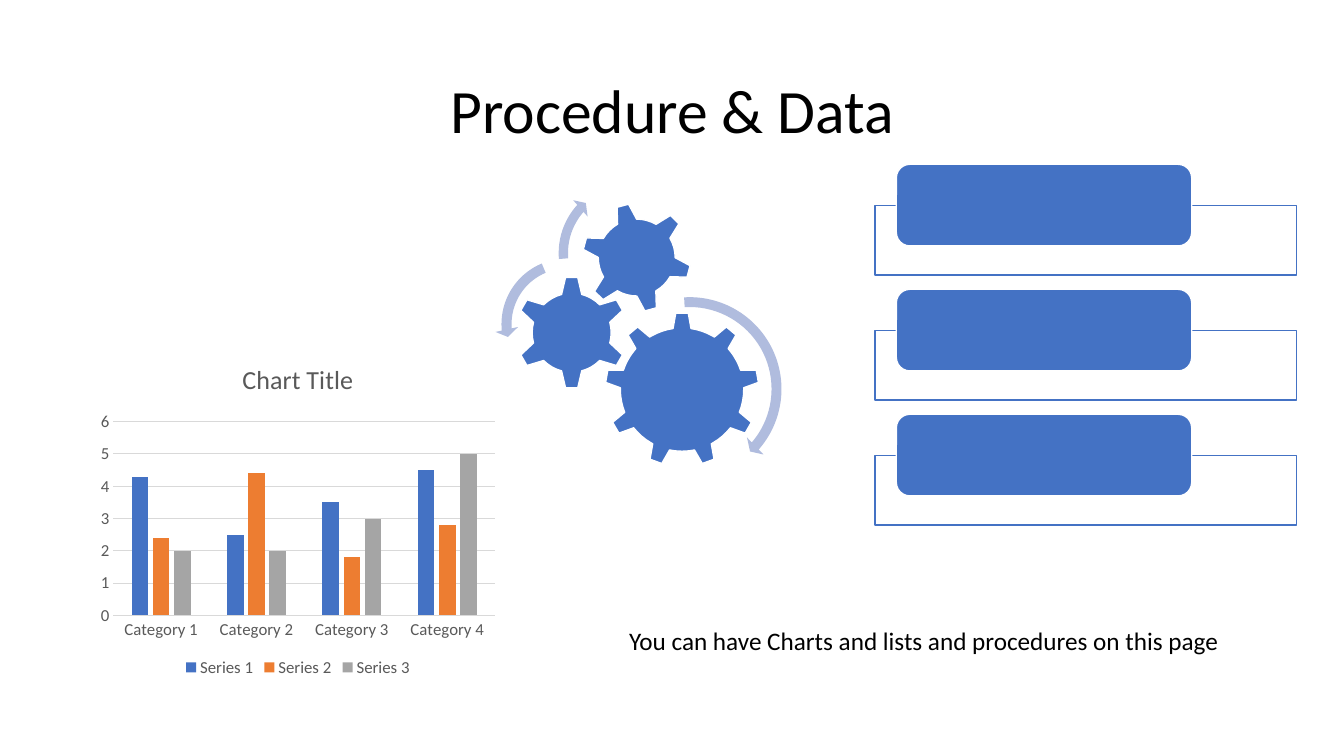
from lxml import etree
from pptx import Presentation
from pptx.chart.data import CategoryChartData
from pptx.dml.color import RGBColor
from pptx.enum.chart import XL_CHART_TYPE, XL_LEGEND_POSITION, XL_TICK_MARK
from pptx.enum.shapes import MSO_SHAPE
from pptx.enum.text import MSO_ANCHOR, MSO_AUTO_SIZE, PP_ALIGN
from pptx.oxml.ns import qn
from pptx.util import Inches, Pt

COLUMNS = XL_CHART_TYPE.COLUMN_CLUSTERED
LEGEND_BOTTOM = XL_LEGEND_POSITION.BOTTOM
NO_TICK = XL_TICK_MARK.NONE
RECTANGLE = MSO_SHAPE.RECTANGLE
ROUNDED = MSO_SHAPE.ROUNDED_RECTANGLE
GEAR_6 = MSO_SHAPE.GEAR_6
GEAR_9 = MSO_SHAPE.GEAR_9
RIGHT_ARC = MSO_SHAPE.CIRCULAR_ARROW
LEFT_ARC = MSO_SHAPE.LEFT_CIRCULAR_ARROW
MIDDLE = MSO_ANCHOR.MIDDLE
FIT_SHAPE = MSO_AUTO_SIZE.SHAPE_TO_FIT_TEXT
FIT_NONE = MSO_AUTO_SIZE.NONE
CENTER = PP_ALIGN.CENTER

BLACK = RGBColor(0x00, 0x00, 0x00)
WHITE = RGBColor(0xFF, 0xFF, 0xFF)
BLUE = RGBColor(0x44, 0x72, 0xC4)
ORANGE = RGBColor(0xED, 0x7D, 0x31)
GRAY = RGBColor(0xA5, 0xA5, 0xA5)
PALE_BLUE = RGBColor(0xB0, 0xBC, 0xDE)
GRID_GRAY = RGBColor(0xD9, 0xD9, 0xD9)
TEXT_GRAY = RGBColor(0x59, 0x59, 0x59)

FONT = "Calibri"
CATEGORIES = ["Category 1", "Category 2", "Category 3", "Category 4"]
SERIES = [
    ("Series 1", (4.3, 2.5, 3.5, 4.5), BLUE),
    ("Series 2", (2.4, 4.4, 1.8, 2.8), ORANGE),
    ("Series 3", (2, 2, 3, 5), GRAY),
]
GEARS = [
    (GEAR_9, 6, 3.1, 1.53, 0),
    (GEAR_6, 5.11, 2.74, 1.12, 0),
    (GEAR_6, 5.77, 2.01, 1.09, 345),
]
ARROWS = [
    (RIGHT_ARC, 5.86, 2.88, 1.96, (0.05, 2.99, 24.57, 159.95, 0.06)),
    (LEFT_ARC, 4.91, 2.5, 1.43, (0.07, 4.3, 104.89, 148.38, 0.08)),
    (RIGHT_ARC, 5.48, 1.74, 1.54, (0.06, 3.94, 133.14, 105.08, 0.07)),
]
LIST_ROWS = 3
ROW_TOP = 1.63
ROW_PITCH = 1.24


def set_values(target, values):
    for name, value in values.items():
        setattr(target, name, value)


def style_font(font, size, color):
    set_values(font, {"name": FONT, "size": Pt(size), "bold": False})
    font.color.rgb = color


def style_line(line, color, width):
    line.color.rgb = color
    line.width = Pt(width)


def write_text(box, text, size, frame_values, para_values):
    frame = box.text_frame
    set_values(frame, frame_values)
    para = frame.paragraphs[0]
    set_values(para, para_values)
    span = para.add_run()
    span.text = text
    style_font(span.font, size, BLACK)


def add_title(page, text):
    title = page.shapes.title
    set_values(title, {"left": Inches(0.92), "top": Inches(0.4),
                       "width": Inches(11.5), "height": Inches(1.45)})
    write_text(title, text, 44,
               {"vertical_anchor": MIDDLE, "word_wrap": True, "auto_size": FIT_NONE},
               {"alignment": CENTER, "line_spacing": 0.9})


def add_caption(page, text):
    box = page.shapes.add_textbox(Inches(6.14), Inches(6.15), Inches(6.12), Inches(0.4))
    write_text(box, text, 18, {"word_wrap": False, "auto_size": FIT_SHAPE}, {})


def add_figure(group, kind, left, top, width, height, fill, line):
    figure = group.shapes.add_shape(
        kind, Inches(left), Inches(top), Inches(width), Inches(height))
    figure.shadow.inherit = False
    figure.fill.solid()
    figure.fill.fore_color.rgb = fill
    if line is None:
        figure.line.fill.background()
    else:
        style_line(figure.line, line, 1)
    return figure


def set_opacity(figure, percent):
    color = figure.fill._xPr.find(qn("a:solidFill"))[0]
    etree.SubElement(color, qn("a:alpha")).set("val", str(percent * 1000))


def add_list(page):
    group = page.shapes.add_group_shape()
    for row in range(LIST_ROWS):
        top = ROW_TOP + row * ROW_PITCH
        frame = add_figure(group, RECTANGLE, 8.68, top + 0.41, 4.18, 0.69, WHITE, BLUE)
        set_opacity(frame, 90)
        add_figure(group, ROUNDED, 8.89, top, 2.93, 0.81, BLUE, WHITE)


def add_gears(page):
    group = page.shapes.add_group_shape()
    for kind, left, top, size, rotation in GEARS:
        gear = add_figure(group, kind, left, top, size, size, BLUE, WHITE)
        gear.rotation = rotation
    for kind, left, top, size, adjustments in ARROWS:
        arrow = add_figure(group, kind, left, top, size, size, PALE_BLUE, None)
        for index, value in enumerate(adjustments):
            arrow.adjustments[index] = value


def style_axes(chart):
    for axis in (chart.category_axis, chart.value_axis):
        set_values(axis, {"major_tick_mark": NO_TICK, "minor_tick_mark": NO_TICK})
        style_font(axis.tick_labels.font, 12, TEXT_GRAY)
    style_line(chart.category_axis.format.line, GRID_GRAY, 0.75)
    values = chart.value_axis
    set_values(values, {"minimum_scale": 0, "maximum_scale": 6, "major_unit": 1})
    values.format.line.fill.background()
    style_line(values.major_gridlines.format.line, GRID_GRAY, 0.75)


def add_column_chart(page):
    data = CategoryChartData()
    data.categories = CATEGORIES
    for name, values, _ in SERIES:
        data.add_series(name, values)
    chart = page.shapes.add_chart(
        COLUMNS, Inches(0.92), Inches(3.42), Inches(4.07), Inches(3.34), data).chart
    style_font(chart.font, 10, BLACK)
    set_values(chart, {"has_title": True, "has_legend": True})
    title = chart.chart_title
    title.include_in_layout = False
    title.text_frame.text = "Chart Title"
    style_font(title.text_frame.paragraphs[0].runs[0].font, 18.6, TEXT_GRAY)
    set_values(chart.legend, {"position": LEGEND_BOTTOM, "include_in_layout": False})
    style_font(chart.legend.font, 12, TEXT_GRAY)
    style_axes(chart)
    plot = chart.plots[0]
    set_values(plot, {"gap_width": 219, "overlap": -27, "vary_by_categories": False})
    for series, (_, _, color) in zip(plot.series, SERIES):
        series.format.fill.solid()
        series.format.fill.fore_color.rgb = color


def main():
    deck = Presentation()
    set_values(deck, {"slide_width": Inches(13.33), "slide_height": Inches(7.5)})
    page = deck.slides.add_slide(deck.slide_layouts[5])
    add_title(page, "Procedure & Data")
    add_column_chart(page)
    add_list(page)
    add_gears(page)
    add_caption(page, "You can have Charts and lists and procedures on this page")
    deck.save("out.pptx")


if __name__ == "__main__":
    main()
